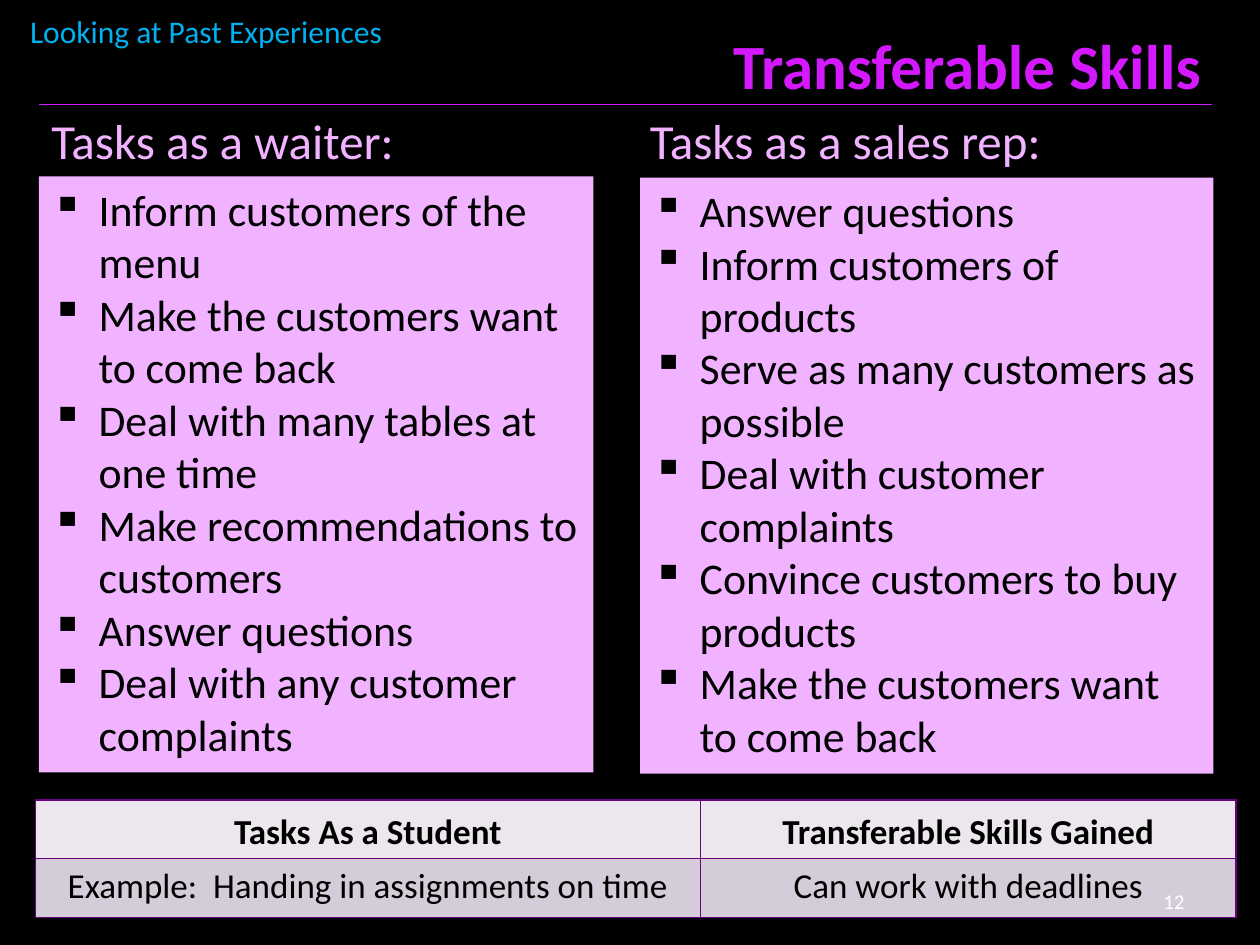
from dataclasses import dataclass

from lxml.etree import SubElement
from pptx import Presentation
from pptx.dml.color import RGBColor
from pptx.enum.shapes import MSO_CONNECTOR, MSO_SHAPE
from pptx.enum.text import MSO_ANCHOR as Anchor, PP_ALIGN as Align
from pptx.oxml.ns import qn
from pptx.util import Inches, Pt

# The slide is a grid of 100 columns by 75 rows.
COLUMNS, ROWS = 100, 75
CELL = Inches(0.1)
FONT = "Calibri"
BLACK, WHITE = "000000", "FFFFFF"
MAGENTA, PINK, BLUE = "D519FF", "F1B2FF", "00B0F0"
BORDER, HEADER_FILL, BODY_FILL = "68007F", "EBE7EC", "D4CCD8"
LEFT_EDGE, RULE_ROW = 3.1, 8.3


@dataclass(frozen=True)
class Area:
    col: float
    row: float
    width: float
    height: float

    def lengths(self) -> tuple[int, ...]:
        return tuple(grid(n) for n in (self.col, self.row, self.width, self.height))


@dataclass(frozen=True)
class Label:
    text: str
    area: Area
    size: float
    color: str
    align: Align = Align.LEFT
    bold: bool = False
    wrap: bool = False
    anchor: Anchor = Anchor.TOP


@dataclass(frozen=True)
class TaskList:
    heading: Label
    area: Area
    tasks: tuple[str, ...]


LABELS = (
    Label("Transferable Skills", Area(30.4, 1.6, 65.9, 7.1), 36, MAGENTA,
          Align.RIGHT, bold=True, wrap=True),
    Label("Looking at Past Experiences", Area(1.4, 0.5, 30.3, 4), 18, BLUE),
)
PAGE_NUMBER = Label("12", Area(71.7, 69.5, 23.3, 4), 12, WHITE, Align.RIGHT,
                    wrap=True, anchor=Anchor.MIDDLE)
TASK_LISTS = (
    TaskList(
        Label("Tasks as a waiter:", Area(LEFT_EDGE, RULE_ROW, 29.5, 5.7), 28, PINK),
        Area(LEFT_EDGE, 14, 44, 47.3),
        ("Inform customers of the menu",
         "Make the customers want to come back",
         "Deal with many tables at one time",
         "Make recommendations to customers",
         "Answer questions",
         "Deal with any customer complaints")),
    TaskList(
        Label("Tasks as a sales rep:", Area(50.6, RULE_ROW, 33.4, 5.7), 28, PINK),
        Area(50.8, 14.1, 45.5, 47.3),
        ("Answer questions",
         "Inform customers of products",
         "Serve as many customers as possible",
         "Deal with customer complaints",
         "Convince customers to buy products",
         "Make the customers want to come back")),
)
STUDENT_AREA = Area(2.8, 63.5, 95.3, 9.3)
STUDENT_COLUMNS = (52.8, 42.5)
STUDENT_ROWS = (
    ("Tasks As a Student", "Transferable Skills Gained"),
    ("Example:  Handing in assignments on time", "Can work with deadlines"),
)


def grid(units: float) -> int:
    return round(units * CELL)


def rgb(color: str) -> RGBColor:
    return RGBColor.from_string(color)


def fill_with(target, color: str) -> None:
    target.fill.solid()
    target.fill.fore_color.rgb = rgb(color)


def style(paragraph, size: float, color: str, bold: bool = False) -> None:
    for run in paragraph.runs:
        run.font.name = FONT
        run.font.size = Pt(size)
        run.font.bold = bold
        run.font.color.rgb = rgb(color)


def add_bullet(paragraph) -> None:
    """Give the paragraph a square bullet with a hanging indent."""
    properties = paragraph._p.get_or_add_pPr()
    properties.set("marL", str(grid(3.75)))
    properties.set("indent", str(-grid(3.75)))
    SubElement(properties, qn("a:buChar"), char="▪")


def add_borders(cell) -> None:
    properties = cell._tc.get_or_add_tcPr()
    for index, side in enumerate(("lnL", "lnR", "lnT", "lnB")):
        line = properties.makeelement(qn(f"a:{side}"), {"w": str(Pt(1))})
        solid = SubElement(line, qn("a:solidFill"))
        SubElement(solid, qn("a:srgbClr"), val=BORDER)
        properties.insert(index, line)


def draw_label(slide, label: Label) -> None:
    frame = slide.shapes.add_textbox(*label.area.lengths()).text_frame
    frame.word_wrap = label.wrap
    frame.vertical_anchor = label.anchor
    frame.text = label.text
    paragraph = frame.paragraphs[0]
    paragraph.alignment = label.align
    style(paragraph, label.size, label.color, label.bold)


def draw_task_list(slide, task_list: TaskList) -> None:
    panel = slide.shapes.add_shape(MSO_SHAPE.RECTANGLE, *task_list.area.lengths())
    panel.shadow.inherit = False
    fill_with(panel, PINK)
    panel.line.fill.background()
    frame = panel.text_frame
    frame.word_wrap = True
    frame.vertical_anchor = Anchor.TOP
    frame.text = "\n".join(task_list.tasks)
    for paragraph in frame.paragraphs:
        paragraph.alignment = Align.LEFT
        add_bullet(paragraph)
        style(paragraph, 25, BLACK)
    draw_label(slide, task_list.heading)


def draw_student_table(slide) -> None:
    table = slide.shapes.add_table(
        len(STUDENT_ROWS), len(STUDENT_COLUMNS), *STUDENT_AREA.lengths()).table
    for column, width in zip(table.columns, STUDENT_COLUMNS):
        column.width = grid(width)
    for r, texts in enumerate(STUDENT_ROWS):
        is_header = r == 0
        for c, text in enumerate(texts):
            cell = table.cell(r, c)
            cell.margin_left = cell.margin_right = grid(0.7)
            cell.margin_top = cell.margin_bottom = 0
            cell.vertical_anchor = Anchor.MIDDLE if is_header else Anchor.TOP
            fill_with(cell, HEADER_FILL if is_header else BODY_FILL)
            add_borders(cell)
            cell.text_frame.text = text
            paragraph = cell.text_frame.paragraphs[0]
            paragraph.alignment = Align.CENTER
            paragraph.line_spacing = 1.15
            paragraph.space_after = Pt(10)
            style(paragraph, 20, BLACK, is_header)


def draw_title_rule(slide) -> None:
    rule = slide.shapes.add_connector(
        MSO_CONNECTOR.STRAIGHT, grid(96.2), grid(RULE_ROW), grid(LEFT_EDGE), grid(RULE_ROW))
    rule.line.color.rgb = rgb(MAGENTA)
    rule.line.width = Pt(0.75)
    SubElement(rule._element.spPr, qn("a:effectLst"))


def main() -> None:
    deck = Presentation()
    deck.slide_width, deck.slide_height = grid(COLUMNS), grid(ROWS)
    slide = deck.slides.add_slide(deck.slide_layouts[6])
    fill_with(slide.background, BLACK)
    draw_student_table(slide)
    for task_list in TASK_LISTS:
        draw_task_list(slide, task_list)
    for label in LABELS:
        draw_label(slide, label)
    draw_title_rule(slide)
    draw_label(slide, PAGE_NUMBER)
    deck.save("out.pptx")


if __name__ == "__main__":
    main()
